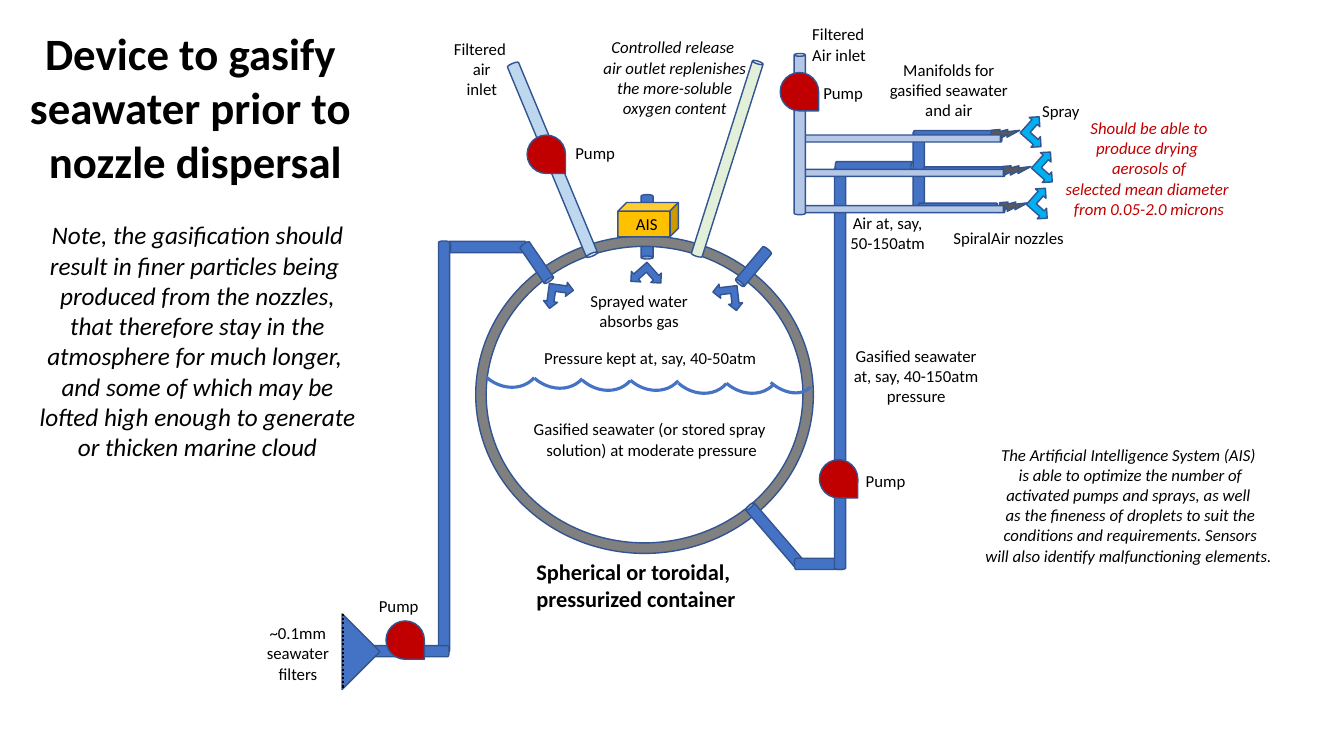
from dataclasses import dataclass
from math import atan2, degrees, hypot

from lxml import etree
from pptx import Presentation
from pptx.dml.color import RGBColor
from pptx.enum.dml import MSO_LINE
from pptx.enum.shapes import MSO_CONNECTOR, MSO_SHAPE
from pptx.enum.text import MSO_ANCHOR, MSO_AUTO_SIZE, PP_ALIGN
from pptx.oxml.ns import qn
from pptx.util import Pt

CAN, DONUT, ARC = MSO_SHAPE.CAN, MSO_SHAPE.DONUT, MSO_SHAPE.ARC
SPRAY, BOLT, CUBE = MSO_SHAPE.LEFT_UP_ARROW, MSO_SHAPE.LIGHTNING_BOLT, MSO_SHAPE.CUBE
TEAR, FUNNEL = MSO_SHAPE.TEAR, MSO_SHAPE.RIGHT_TRIANGLE
STRAIGHT, DOTTED = MSO_CONNECTOR.STRAIGHT, MSO_LINE.ROUND_DOT
LEFT, CENTER = PP_ALIGN.LEFT, PP_ALIGN.CENTER
TOP, FIT, NO_FIT = MSO_ANCHOR.TOP, MSO_AUTO_SIZE.SHAPE_TO_FIT_TEXT, MSO_AUTO_SIZE.NONE


@dataclass(frozen=True)
class Theme:
    font: str = "Calibri"
    title: int = 32
    note: int = 18
    caption: int = 16
    label: int = 12
    ink: str = "000000"
    water: str = "4472C4"
    edge: str = "325491"
    wall: str = "808080"
    pump: str = "C00000"
    inlet: str = "BDD7EE"
    outlet: str = "E2F0D9"
    air: str = "B4C7E7"
    nozzle: str = "595959"
    mist: str = "00B0F0"
    ais: str = "FFC000"


THEME = Theme()

TITLE = ["Device to gasify ", "seawater prior to ", "nozzle dispersal"]
TITLE_BOX = (13.7, 15.1, 252, 124)

AIS_PIPE = (462.2, 185, 462.2, 139, 8.6)
VESSEL = (339.8, 168.5, 241.2, 226.8)
WAVE_TOPS = [226.8, 227.5, 229, 229, 231.1, 231.1]
WAVE_LEFT, WAVE_STEP, WAVE_SIZE, WAVE_TURN = 339.8, 34.3, (44.6, 51.8), 131.2
LAST_WAVE = (545, 237.6, 32.4, 46.8)

SEAWATER_PIPES = [
    (320, 176.4, 376.2, 176.4, 8),
    (317.2, 465.8, 317.2, 172.1, 8),
    (264.6, 465.1, 320.8, 465.1, 8),
    (535, 361, 571.7, 403.6, 8),
    (602.6, 402.8, 567.4, 402.8, 8),
    (600.1, 119.5, 600.1, 406.8, 8),
]
INLET_PIPE = (423.2, 182.9, 366, 45.3, 8.6)
MANIFOLD_PIPES = [
    (652.7, 119.5, 596.5, 119.5, 8),
    (656.3, 93.6, 656.3, 149.8, 8),
    (708.9, 95, 652.7, 95, 3.6),
    (716.1, 121, 659.9, 121, 3.6),
    (712.5, 146.9, 656.3, 146.9, 3.6),
    (392.6, 201, 374.2, 174.2, 8),
    (527.8, 202.8, 548.6, 178, 8),
]
OUTLET_PIPE = (541.6, 43.7, 497.4, 183.1, 8)
AIR_PIPES = [
    (717.9, 149.4, 571.7, 149.4, 5),
    (717.9, 123.5, 571.7, 123.5, 5),
    (715.7, 99, 569.5, 99, 5),
    (571.3, 38.2, 571.3, 153.4, 8),
]

SPRAY_SIZE = 20.2
VESSEL_SPRAYS = [(398.9, 211, 187.9), (461.5, 198, 228.3), (519.8, 212.4, 263.2)]
NOZZLES = [(716.8, 95.8), (724.7, 121.7), (722.5, 147.6)]
NOZZLE_SIZE, NOZZLE_TURN = (16.6, 17.3), 300.8
MISTS = [(739.4, 94.3), (747.4, 119.5), (743.8, 145.4)]
MIST_TURN = 131.6
FILTER_CENTER, FILTER_SIZE = (244.4, 465.5), 38.2
FILTER_MESH = (244.8, 438.5, 244.8, 492.5)
PUMPS = [(289.4, 457.2), (390.2, 110.2), (599, 342), (571, 65.5)]
PUMP_SIZE = 27.4
AIS_BOX = (441.4, 144.7, 43.2, 24.5)

PUMP_LABELS = [(263.5, 421.9), (403.9, 98.6), (581, 55.4), (611.3, 332.6)]
LABELS = [
    ((414, 203.8, 85, 36), ["Sprayed water", "absorbs gas"], {}),
    ((381.6, 244.8, 167.8, 21.6), ["Pressure kept at, say, 40-50atm"], {"align": LEFT}),
    ((316.8, 23.8, 54.7, 51), ["Filtered ", "air", "inlet"], {}),
    ((421.9, 23, 120.2, 65.5),
     ["Controlled release ", "air outlet replenishes", "the more-soluble", "oxygen content"],
     {"italic": True}),
    ((373, 295.9, 185, 36),
     ["Gasified seawater (or stored spray ", "solution) at moderate pressure"], {}),
    ((375.1, 395.3, 158.4, 46), ["Spherical or toroidal, ", "pressurized container"],
     {"size": THEME.caption, "bold": True}),
    ((182.9, 441.4, 59.8, 51), ["~0.1mm", "seawater", "filters"], {}),
    ((627.8, 38.9, 100, 51), ["Manifolds for", "gasified seawater", "and air"], {}),
    ((673.9, 159.1, 94.3, 21.6), ["SpiralAir nozzles"], {"align": LEFT}),
    ((752.4, 80.6, 136.8, 80),
     ["Should be able to", "produce drying ", "aerosols of", "selected mean diameter ",
      "from 0.05-2.0 microns"], {"italic": True, "color": THEME.pump}),
    ((573.1, 13.7, 53.3, 36), ["Filtered", "Air inlet"], {"align": LEFT}),
    ((737.3, 68.4, 41, 21.6), ["Spray"], {"align": LEFT}),
    ((447.1, 149, 30.2, 21.6), ["AIS"], {"align": LEFT}),
    ((601.9, 243.4, 105.1, 51), ["Gasified seawater", "at, say, 40-150atm", "pressure"], {}),
    ((599.8, 148.3, 68.4, 36), ["Air at, say,", "50-150atm"], {}),
    ((19.4, 153.4, 243.4, 181.4),
     ["Note, the gasification should", "result in finer particles being ",
      "produced from the nozzles,", "that therefore stay in the",
      "atmosphere for much longer, ", "and some of which may be",
      "lofted high enough to generate", "or thicken marine cloud"],
     {"size": THEME.note, "italic": True}),
    ((695.5, 313.9, 223.9, 94.3),
     ["The Artificial Intelligence System (AIS) ", "is able to optimize the number of",
      "activated pumps and sprays, as well ", "as the fineness of droplets to suit the",
      "conditions and requirements. Sensors", "will also identify malfunctioning elements. "],
     {"italic": True}),
]

deck = Presentation()
deck.slide_width, deck.slide_height = Pt(960), Pt(540)
slide = deck.slides.add_slide(deck.slide_layouts[5])
shapes = slide.shapes


def write(holder, lines, size=THEME.label, color=THEME.ink, bold=False, italic=False,
          align=CENTER, wrap=False, fit=FIT):
    frame = holder.text_frame
    frame.word_wrap, frame.auto_size, frame.vertical_anchor = wrap, fit, TOP
    frame.margin_left = frame.margin_right = Pt(7.2)
    frame.margin_top = frame.margin_bottom = Pt(3.6)
    for index, line in enumerate(lines):
        paragraph = frame.add_paragraph() if index else frame.paragraphs[0]
        paragraph.alignment, paragraph.line_spacing = align, 1.0
        paragraph.space_before = paragraph.space_after = Pt(0)
        run = paragraph.add_run()
        run.text = line
        font = run.font
        font.name, font.size, font.bold, font.italic = THEME.font, Pt(size), bold, italic
        font.color.rgb = RGBColor.from_string(color)


def draw(preset, box, fill=THEME.water, turn=0, edge=THEME.edge, weight=1):
    part = shapes.add_shape(preset, *map(Pt, box))
    part.shadow.inherit = False
    part.rotation = turn
    if fill:
        part.fill.solid()
        part.fill.fore_color.rgb = RGBColor.from_string(fill)
    else:
        part.fill.background()
    part.line.color.rgb = RGBColor.from_string(edge)
    part.line.width = Pt(weight)
    return part


def draw_centered(preset, center, width, height, **look):
    x, y = center
    return draw(preset, (x - width / 2, y - height / 2, width, height), **look)


def pipe(x1, y1, x2, y2, bore, fill=THEME.water):
    draw_centered(CAN, ((x1 + x2) / 2, (y1 + y2) / 2), bore, hypot(x2 - x1, y2 - y1),
                  fill=fill, turn=degrees(atan2(x1 - x2, y2 - y1)) % 360)


def wave(box):
    draw(ARC, box, fill=None, turn=WAVE_TURN, edge=THEME.water, weight=2.25)


title = shapes.title
title.left, title.top, title.width, title.height = map(Pt, TITLE_BOX)
write(title, TITLE, size=THEME.title, bold=True, wrap=True, fit=NO_FIT)

pipe(*AIS_PIPE)
draw(DONUT, VESSEL, fill=THEME.wall).adjustments[0] = 0.033
for index, top in enumerate(WAVE_TOPS):
    wave((WAVE_LEFT + index * WAVE_STEP, top, *WAVE_SIZE))
wave(LAST_WAVE)

for run_of_pipe in SEAWATER_PIPES:
    pipe(*run_of_pipe)
pipe(*INLET_PIPE, fill=THEME.inlet)
for run_of_pipe in MANIFOLD_PIPES:
    pipe(*run_of_pipe)
for x, y, turn in VESSEL_SPRAYS:
    draw_centered(SPRAY, (x, y), SPRAY_SIZE, SPRAY_SIZE, turn=turn)

draw_centered(FUNNEL, FILTER_CENTER, FILTER_SIZE, FILTER_SIZE, turn=225)
mesh = shapes.add_connector(STRAIGHT, *map(Pt, FILTER_MESH))
mesh.line.color.rgb = RGBColor.from_string(THEME.ink)
mesh.line.width, mesh.line.dash_style = Pt(1.5), DOTTED
etree.SubElement(mesh._element.spPr, qn("a:effectLst"))

pipe(*OUTLET_PIPE, fill=THEME.outlet)
for nozzle, mist in zip(NOZZLES, MISTS):
    draw_centered(BOLT, nozzle, *NOZZLE_SIZE, fill=THEME.nozzle, turn=NOZZLE_TURN)
    draw_centered(SPRAY, mist, SPRAY_SIZE, SPRAY_SIZE, fill=THEME.mist, turn=MIST_TURN)
for run_of_pipe in AIR_PIPES:
    pipe(*run_of_pipe, fill=THEME.air)
for pump in PUMPS:
    draw_centered(TEAR, pump, PUMP_SIZE, PUMP_SIZE, fill=THEME.pump, turn=90)
draw(CUBE, AIS_BOX, fill=THEME.ais)

pump_labels = [((x, y, 43.2, 21.6), ["Pump"], {"align": LEFT}) for x, y in PUMP_LABELS]
for box, lines, look in LABELS + pump_labels:
    write(shapes.add_textbox(*map(Pt, box)), lines, **look)

deck.save("out.pptx")
